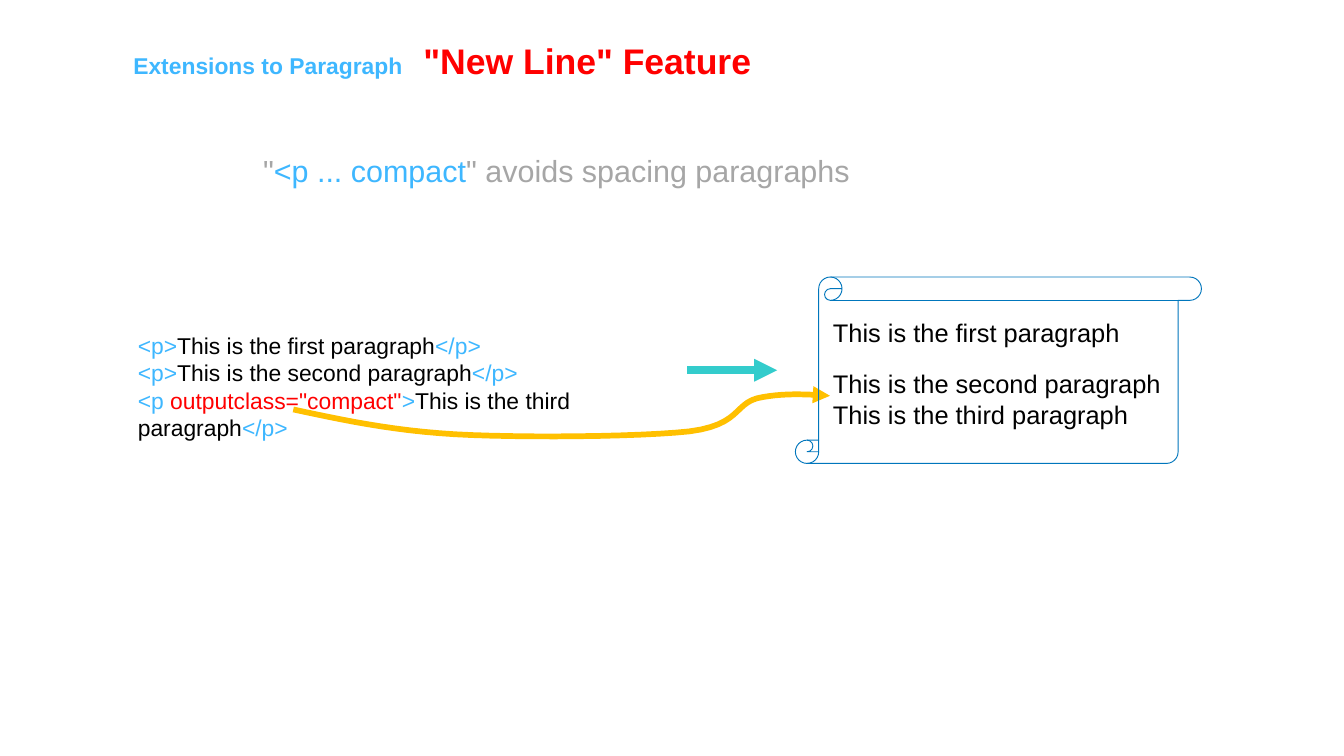
"""Build the slide on the "New Line" feature of paragraphs."""
from lxml import etree
from pptx import Presentation
from pptx import util as u
from pptx.dml.color import RGBColor
from pptx.enum import shapes, text
from pptx.oxml import ns

BLUE, RED, GREY, BLACK = "3EB7FF", "FF0000", "A6A6A6", "000000"


def write(tf, paragraphs, size, wrap=True, bold=False):
    """Fill a text frame with paragraphs of (text, colour[, size]) runs."""
    tf.word_wrap = wrap
    tf.auto_size = text.MSO_AUTO_SIZE.NONE
    for i, runs in enumerate(paragraphs):
        p = tf.add_paragraph() if i else tf.paragraphs[0]
        p.alignment = text.PP_ALIGN.LEFT
        for words, colour, *own_size in runs:
            if words == "\n":
                p.add_line_break()
                continue
            r = p.add_run()
            r.text = words
            r.font.name = "Arial"
            r.font.size = u.Pt(own_size[0] if own_size else size)
            r.font.bold = bold
            r.font.color.rgb = RGBColor.from_string(colour)


def outline(sp, colour, width, arrow=False):
    """Give a shape a plain line, with an arrowhead at its end if asked."""
    sp.line.color.rgb = RGBColor.from_string(colour)
    sp.line.width = u.Pt(width)
    if arrow:
        ln = sp.line._get_or_add_ln()
        etree.SubElement(ln, ns.qn("a:tailEnd"), type="triangle")
    etree.SubElement(sp._element.spPr, ns.qn("a:effectLst"))


prs = Presentation()
prs.slide_width, prs.slide_height = u.Cm(37.34), u.Cm(21.01)
s = prs.slides.add_slide(prs.slide_layouts[5])

title = s.shapes.title
title.left, title.top = u.Cm(3.45), u.Cm(0.51)
title.width, title.height = u.Cm(31.6), u.Cm(1.98)
tf = title.text_frame
tf.vertical_anchor = text.MSO_ANCHOR.BOTTOM
tf.margin_bottom = u.Cm(0.22)
pPr = tf.paragraphs[0]._p.get_or_add_pPr()
tabs = etree.SubElement(pPr, ns.qn("a:tabLst"))
etree.SubElement(tabs, ns.qn("a:tab"), pos=str(u.Cm(8.06)), algn="l")
write(tf, [[("Extensions to Paragraph\t", BLUE, 18),
            ('"New Line" Feature', RED)]], 28, bold=True)

source = [
    [("<p>", BLUE), ("This is the first paragraph", BLACK), ("</p>", BLUE)],
    [("<p>", BLUE), ("This is the second paragraph", BLACK), ("</p>", BLUE)],
    [("<p ", BLUE), ('outputclass="compact"', RED), (">", BLUE),
     ("This is the third paragraph", BLACK), ("</p>", BLUE)],
]
first = [[("This is the first paragraph", BLACK)]]
compact = [[("This is the second paragraph", BLACK), ("\n", BLACK),
            ("This is the third paragraph", BLACK)]]
subtitle = [[('"', GREY), ("<p ... compact", BLUE),
             ('" avoids spacing paragraphs', GREY)]]
boxes = [
    (source, 18, True, (3.58, 9.09, 16.1, 3.33)),
    (first, 20, False, (22.89, 8.69, 8.53, 1.12)),
    (compact, 20, False, (22.89, 10.11, 9.7, 1.96)),
    (subtitle, 24, False, (7.06, 4.11, 16.92, 1.27)),
]
for paragraphs, size, wrap, place in boxes:
    box = s.shapes.add_textbox(*map(u.Cm, place))
    write(box.text_frame, paragraphs, size, wrap)

arrow = s.shapes.add_connector(shapes.MSO_CONNECTOR.STRAIGHT, u.Cm(19.1),
                               u.Cm(10.29), u.Cm(21.59), u.Cm(10.29))
outline(arrow, "33CCCC", 6, arrow=True)

start = (8.15, 11.38)
curves = [
    ((9.47, 11.66), (10.82, 11.96), (12.65, 12.07)),
    ((14.5, 12.17), (17.75, 12.14), (19.15, 11.99)),
    ((20.55, 11.81), (20.4, 11.25), (21.03, 11.07)),
    ((21.69, 10.92), (22.38, 10.95), (23.06, 11)),
]
steps = 12
points = []
a = start
for b, c, d in curves:
    for i in range(1, steps + 1):
        t = i / steps
        weights = ((1 - t) ** 3, 3 * t * (1 - t) ** 2,
                   3 * t ** 2 * (1 - t), t ** 3)
        points.append([u.Cm(sum(w * v for w, v in zip(weights, axis)))
                       for axis in zip(a, b, c, d)])
    a = d
builder = s.shapes.build_freeform(*map(u.Cm, start))
builder.add_line_segments(points, close=False)
swoosh = builder.convert_to_shape()
swoosh.fill.background()
outline(swoosh, "FFC000", 4.5, arrow=True)

scroll = s.shapes.add_shape(shapes.MSO_SHAPE.VERTICAL_SCROLL,
                            *map(u.Cm, (22.1, 7.7, 11.28, 5.18)))
scroll.auto_shape_type
scroll.fill.background()
outline(scroll, "0076BC", 0.75)

prs.save("out.pptx")
